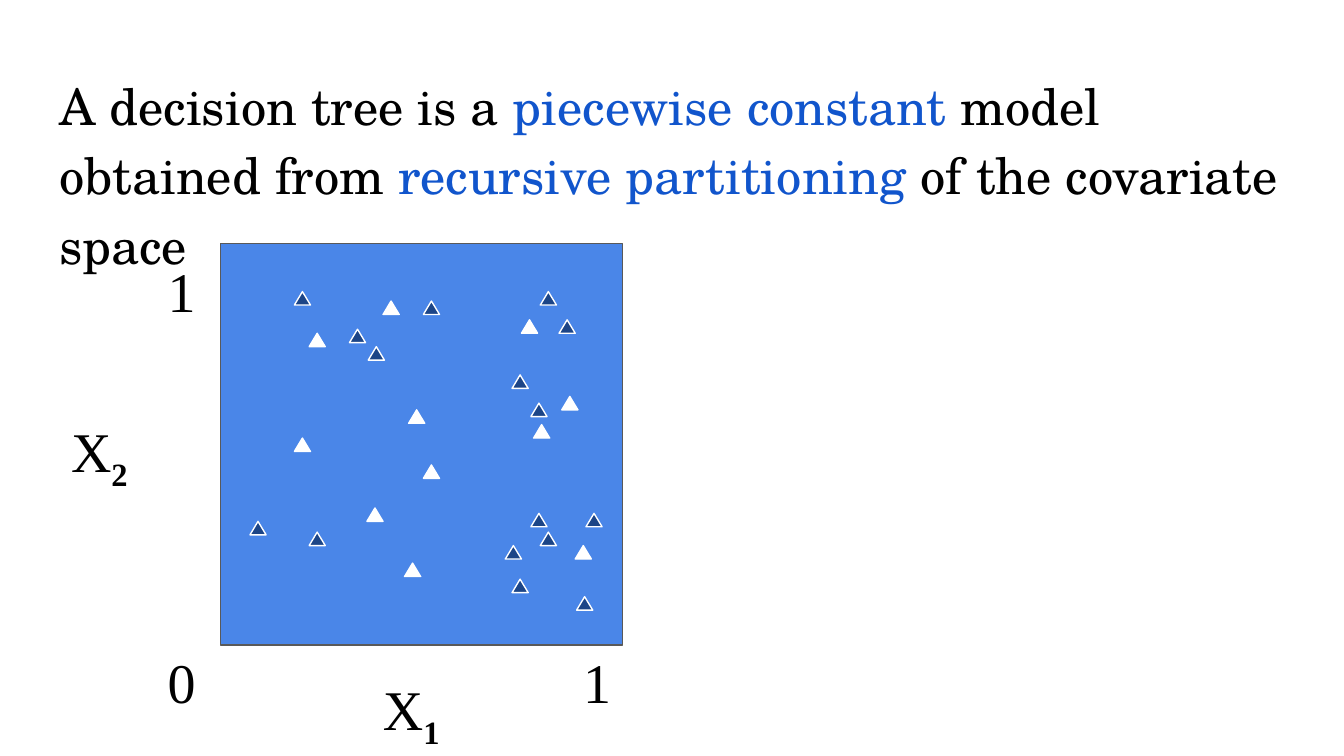
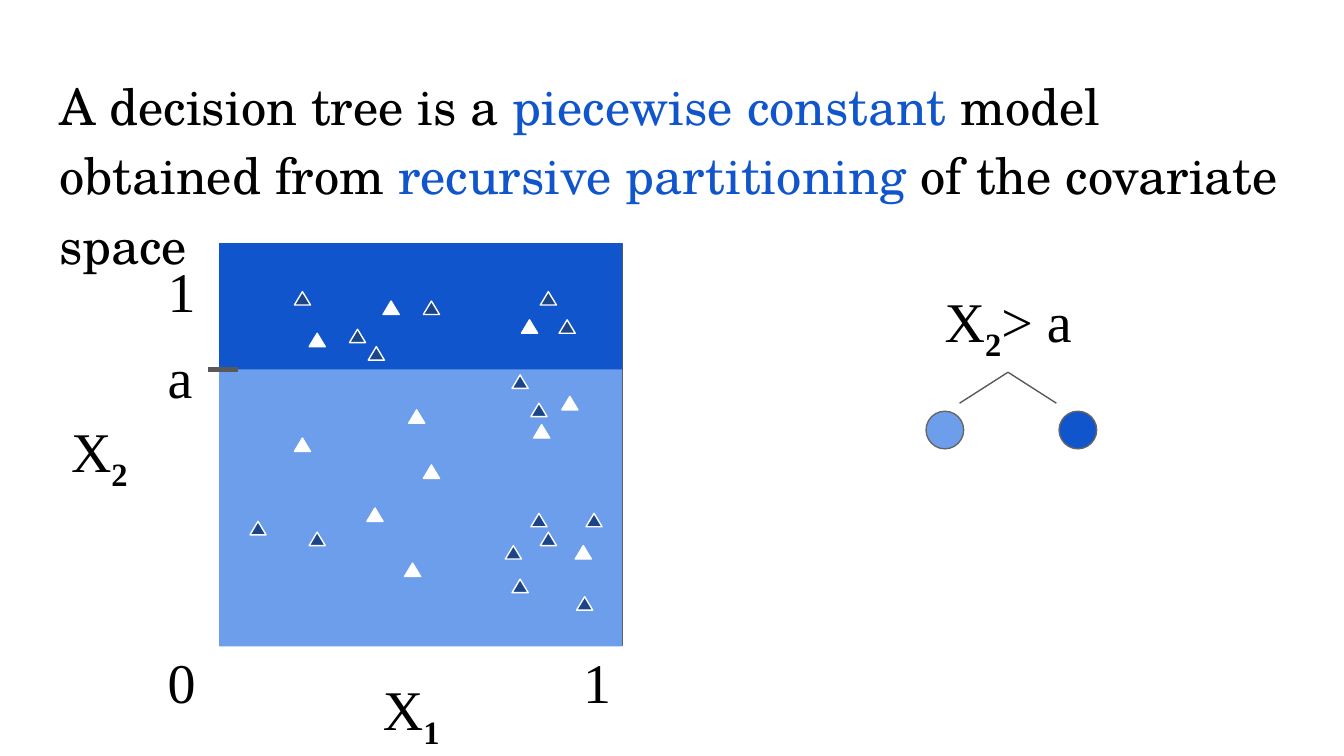
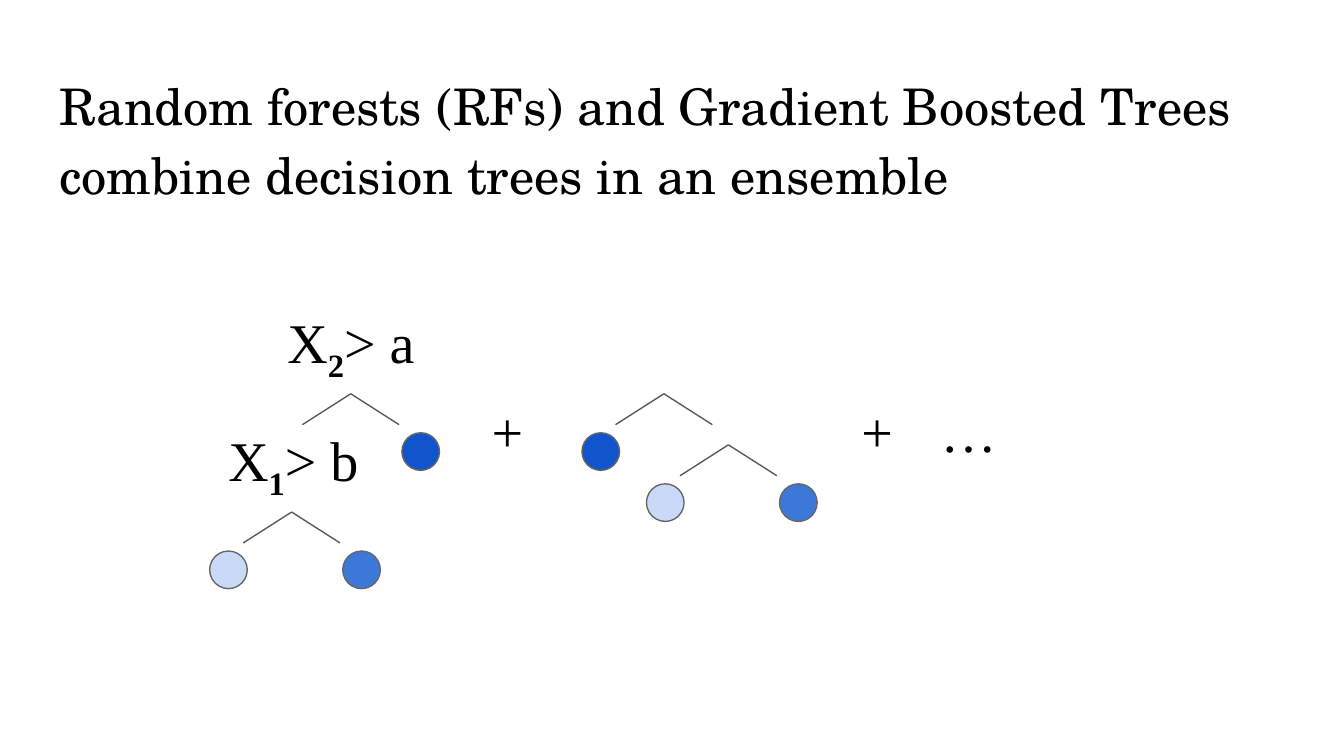
"""Build three slides on decision trees and their ensembles."""
from lxml import etree
from pptx import Presentation
from pptx import util as u
from pptx.dml.color import RGBColor
from pptx.enum import shapes, text
from pptx.oxml.ns import qn

BLACK = RGBColor(0x00, 0x00, 0x00)
WHITE = RGBColor(0xFF, 0xFF, 0xFF)
GREY = RGBColor(0x59, 0x59, 0x59)
RIM = RGBColor(0x66, 0x66, 0x66)
NAVY = RGBColor(0x1C, 0x45, 0x87)
DEEP = RGBColor(0x11, 0x55, 0xCC)
ROYAL = RGBColor(0x3C, 0x78, 0xD8)
PLAIN = RGBColor(0x4A, 0x86, 0xE8)
LIGHT = RGBColor(0x6D, 0x9E, 0xEB)
PALE = RGBColor(0xC9, 0xDA, 0xF8)

COLS, ROWS = 100, 56.25
CELL = u.Inches(0.1)
KIND = shapes.MSO_SHAPE

TREE = [("A decision tree is a ", BLACK), ("piecewise constant", DEEP),
        (" model obtained from ", BLACK), ("recursive partitioning", DEEP),
        (" of the covariate space", BLACK)]
FOREST = [("Random forests (RFs) and Gradient Boosted Trees "
           "combine decision trees in an ensemble", BLACK)]

DARK = [(40.2, 21.7), (41.6, 23.8), (38.1, 27.9), (39.5, 38.2), (40.2, 39.6),
        (38.1, 43.1), (42.9, 44.4), (43.6, 38.2), (21.9, 21.7), (26, 24.5),
        (27.4, 25.8), (31.5, 22.4), (37.6, 40.6), (23, 39.6), (39.5, 30),
        (18.6, 38.8)]
BRIGHT = [(21.9, 32.6), (30.4, 30.5), (31.5, 34.6), (41.8, 29.5), (39.7, 31.6),
          (27.3, 37.8), (30.1, 41.9), (38.8, 23.8), (42.8, 40.6), (28.5, 22.4),
          (23, 24.8)]


def span(*cells):
    """Turn grid cells into slide lengths."""
    return [round(c * CELL) for c in cells]


class Deck:
    """Hold the style and the current slide."""

    def __init__(self):
        """Open an empty deck with a grid of COLS by ROWS."""
        self.prs = Presentation()
        self.prs.slide_width, self.prs.slide_height = span(COLS, ROWS)
        self.slide = None

    def page(self, parts, high):
        """Start a slide with a title of coloured parts."""
        self.slide = self.prs.slides.add_slide(self.prs.slide_layouts[5])
        head = self.slide.shapes.title
        head.left, head.top, head.width, head.height = span(3.4, 3.9, 93.2, high)
        line = self.frame(head)
        line.line_spacing = 1.15
        for words, hue in parts:
            self.run(line, words, "TeX Gyre Schola", 27, hue)

    def frame(self, shape):
        """Set up a text frame and return its first paragraph."""
        box = shape.text_frame
        box.word_wrap = True
        box.auto_size = text.MSO_AUTO_SIZE.NONE
        box.vertical_anchor = text.MSO_ANCHOR.TOP
        box.margin_left = box.margin_right = CELL
        box.margin_top = box.margin_bottom = CELL
        line = box.paragraphs[0]
        line.alignment = text.PP_ALIGN.LEFT
        return line

    def run(self, line, words, face="Times New Roman", size=30, hue=BLACK):
        """Add one formatted run."""
        run = line.add_run()
        run.text = words
        run.font.name, run.font.size = face, u.Pt(size)
        run.font.color.rgb = hue
        return run

    def label(self, x, y, wide, words, sub="", rest="", high=6.6):
        """Write a label with an optional bold subscript."""
        box = self.slide.shapes.add_textbox(*span(x, y, wide, high))
        line = self.frame(box)
        self.run(line, words)
        if sub:
            low = self.run(line, sub)
            low.font.bold = True
            low.font._element.set("baseline", "-25000")
        if rest:
            self.run(line, rest)

    def shape(self, kind, box, fill, edge=None, group=None):
        """Draw a filled shape on the slide or in a group."""
        home = group or self.slide
        item = home.shapes.add_shape(kind, *span(*box))
        item.shadow.inherit = False
        item.fill.solid()
        item.fill.fore_color.rgb = fill
        if edge is None:
            item.line.fill.background()
        else:
            item.line.color.rgb = edge
            item.line.width = u.Pt(0.75)

    def line(self, start, end, width=0.75):
        """Draw a straight grey line."""
        item = self.slide.shapes.add_connector(
            shapes.MSO_CONNECTOR.STRAIGHT, *span(*start, *end))
        item.line.color.rgb = GREY
        item.line.width = u.Pt(width)
        etree.SubElement(item._element.spPr, qn("a:effectLst"))

    def fork(self, x, y, left=None, right=None, rule=None):
        """Draw a split with its rule and coloured leaves."""
        if rule:
            self.label(x - 5.7, y - 7.4, 12.8, *rule)
        for side in (-3.6, 3.6):
            self.line((x, y), (x + side, y + 2.3))
        for shift, leaf in ((-6.1, left), (3.8, right)):
            if leaf is not None:
                self.shape(KIND.OVAL, (x + shift, y + 2.9, 2.8, 2.8), leaf, RIM)

    def plot(self, bands=(), cut=None):
        """Draw the covariate square, its bands, axes and points."""
        self.shape(KIND.RECTANGLE, (16.4, 18.1, 29.9, 29.9), PLAIN, GREY)
        for top, high, hue in bands:
            self.shape(KIND.RECTANGLE, (16.3, top, 30, high), hue)
        if cut:
            self.label(11.5, cut - 3, 4, "a", high=7.1)
            self.line((15.5, cut), (17.7, cut), 3)
        for x, y, mark in ((11.5, 47.2, "0"), (42.4, 47.2, "1"), (11.5, 18.1, "1")):
            self.label(x, y, 4, mark, high=7.1)
        dots = self.slide.shapes.add_group_shape()
        for spots, hue in ((DARK, NAVY), (BRIGHT, WHITE)):
            for x, y in spots:
                self.shape(KIND.ISOSCELES_TRIANGLE, (x, y, 1.2, 1), hue, WHITE, dots)
        for x, y, sub in ((4.3, 30, "2"), (27.5, 49.2, "1")):
            self.label(x, y, 7.2, "X", sub, high=7.1)


def main():
    """Build and save the deck."""
    deck = Deck()
    deck.page(TREE, 26.1)
    deck.plot()

    deck.page(TREE, 26.1)
    cut = 27.5
    deck.plot([(18.1, cut - 18.1, DEEP), (cut, 20.6, LIGHT)], cut)
    deck.fork(75, 27.7, LIGHT, DEEP, ("X", "2", "> a"))

    deck.page(FOREST, 12.6)
    deck.fork(26.1, 29.3, right=DEEP, rule=("X", "2", "> a"))
    deck.fork(21.7, 38.1, PALE, ROYAL, ("X", "1", "> b"))
    deck.fork(49.4, 29.3, left=DEEP)
    deck.fork(54.2, 33.1, PALE, ROYAL)
    for x, wide, sign in ((35.6, 4.5, "+"), (63.1, 4.5, "+"), (69, 9.7, "…")):
        deck.label(x, 28.5, wide, sign)
    deck.prs.save("out.pptx")


if __name__ == "__main__":
    main()
